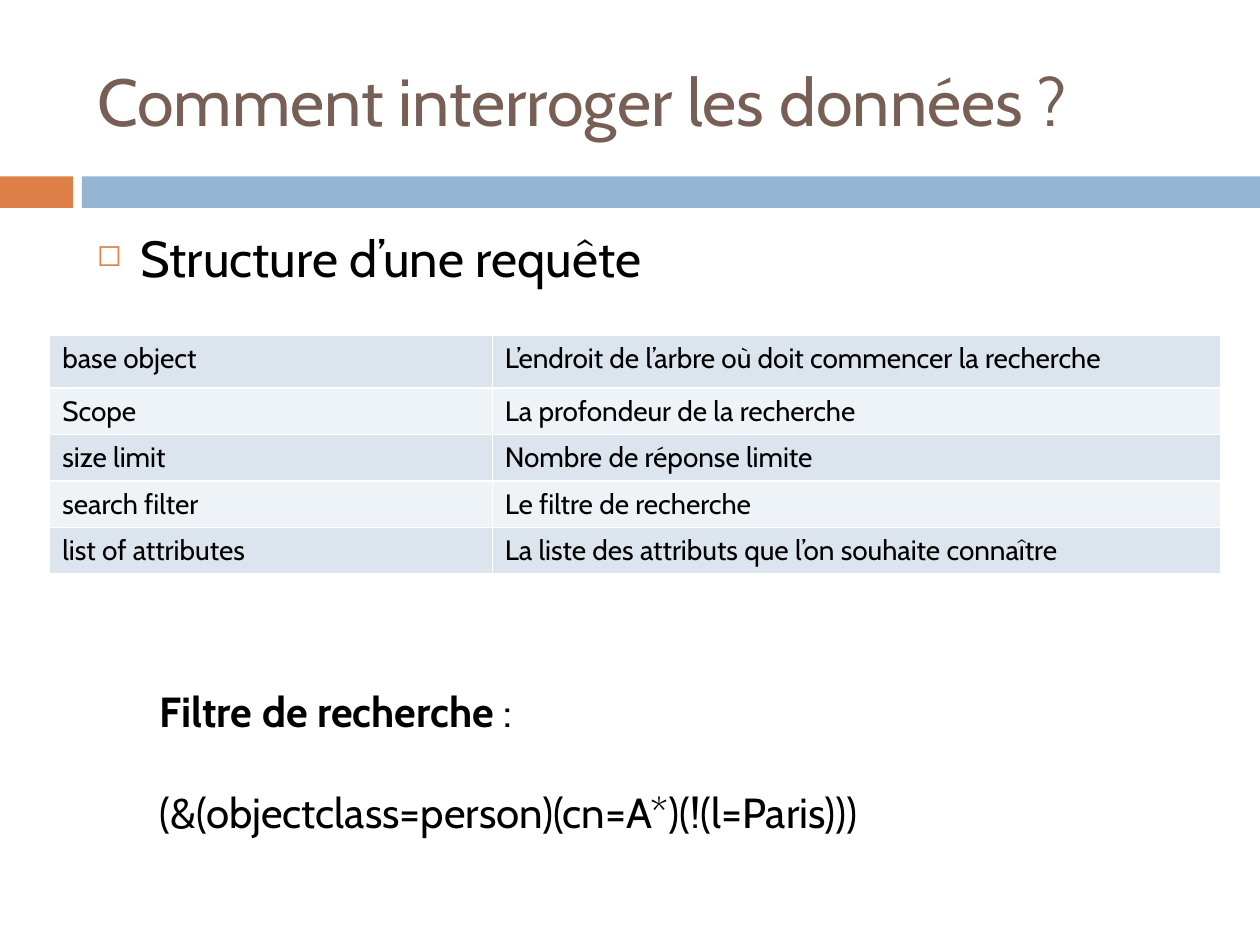
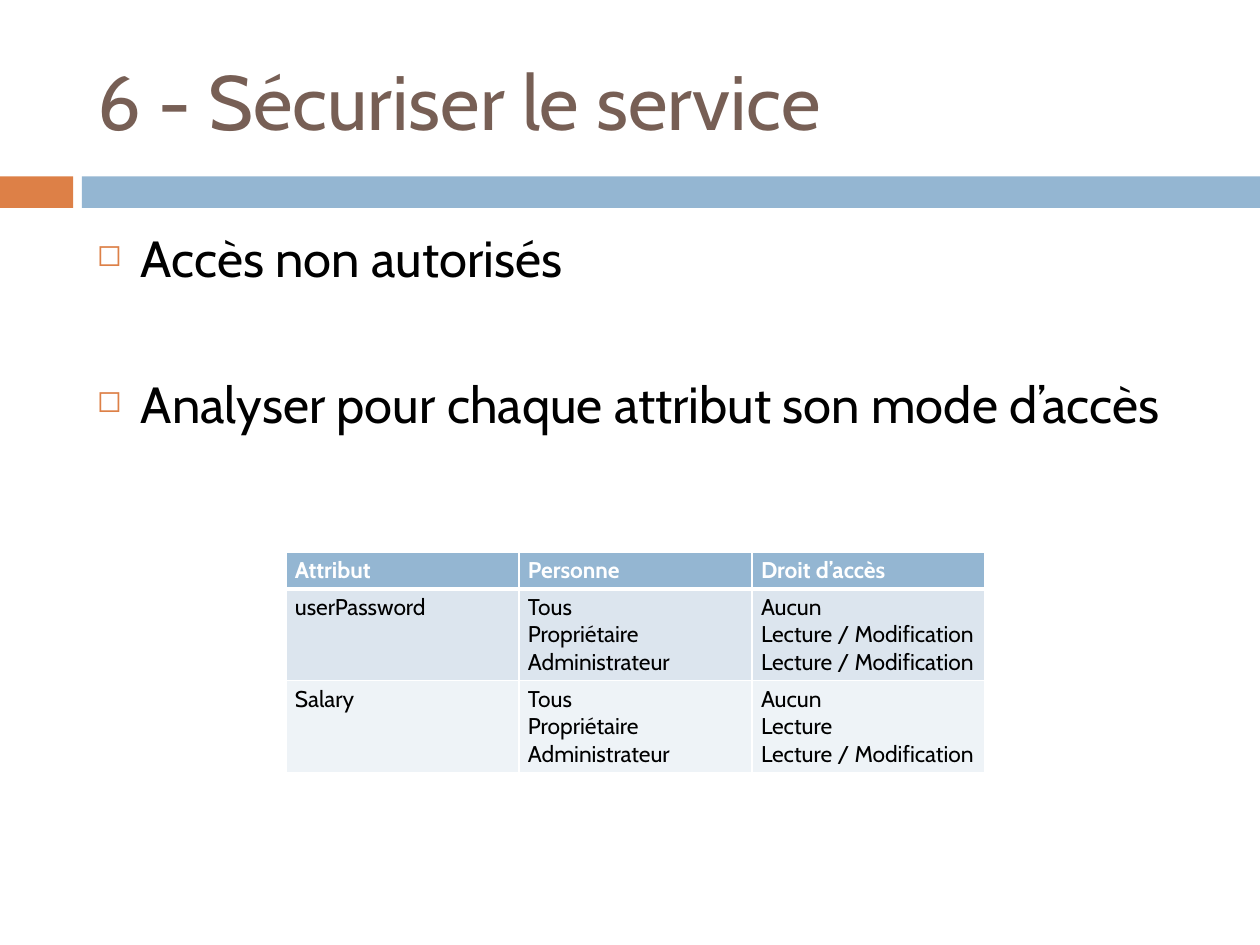
"""Build two slides on querying directory data and securing the service."""
from lxml import etree
from pptx import Presentation
from pptx.dml.color import RGBColor
from pptx.enum.shapes import MSO_SHAPE
from pptx.enum.text import MSO_ANCHOR, MSO_AUTO_SIZE, PP_ALIGN
from pptx.oxml.ns import qn
from pptx.util import Pt

FONT = "Cabin"
BLACK, WHITE, BROWN = "000000", "FFFFFF", "775F55"
ORANGE, BLUE = "DD8047", "94B6D2"
ROW_FILLS = ["DCE5EE", "EEF3F7"]
BANDS = [(0, 41.76, ORANGE), (46.8, 673.2, BLUE)]
BODY_LEFT, BODY_TOP, BODY_WIDTH = 48.24, 126, 642.24
LINE_GAP, BULLET_INDENT = 7, 25.2
FRAME_FORMAT = {"word_wrap": True, "auto_size": MSO_AUTO_SIZE.NONE}

SLIDES = [
    {
        "title": "Comment interroger les données ?",
        "title_size": 38,
        "bullets": [("Structure d’une requête", LINE_GAP)],
        "body_height": 70.56,
        "table": {
            "at": (28.44, 191.4),
            "columns": [252.9, 416.2],
            "heights": [30.4] + [26.6] * 4,
            "size": 16,
            "margins": (7.2, 3.6),
            "header": False,
            "rows": [
                ("base object", "L’endroit de l’arbre où doit commencer la recherche"),
                ("Scope", "La profondeur de la recherche"),
                ("size limit", "Nombre de réponse limite"),
                ("search filter", "Le filtre de recherche"),
                ("list of attributes", "La liste des attributs que l’on souhaite connaître"),
            ],
        },
    },
    {
        "title": "6 - Sécuriser le service",
        "title_size": 44,
        "bullets": [
            ("Accès non autorisés", LINE_GAP),
            ("Analyser pour chaque attribut son mode d’accès", 48.8),
        ],
        "body_height": 354.24,
        "table": {
            "at": (163.44, 315.4),
            "columns": [133.2] * 3,
            "heights": [21.2, 52.4, 52.4],
            "size": 13,
            "margins": (5.1, 2.6),
            "header": True,
            "rows": [
                ("Attribut", "Personne", "Droit d’accès"),
                ("userPassword", "Tous\nPropriétaire\nAdministrateur",
                 "Aucun\nLecture / Modification\nLecture / Modification"),
                ("Salary", "Tous\nPropriétaire\nAdministrateur",
                 "Aucun\nLecture\nLecture / Modification"),
            ],
        },
    },
]


def color(hex_value):
    return RGBColor.from_string(hex_value)


def write(frame, text, size, hex_value, bold=False):
    frame.text = text
    for paragraph in frame.paragraphs:
        paragraph.alignment = PP_ALIGN.LEFT
        for run in paragraph.runs:
            for name, value in {"name": FONT, "size": Pt(size), "bold": bold}.items():
                setattr(run.font, name, value)
            run.font.color.rgb = color(hex_value)


presentation = Presentation()
presentation.slide_width, presentation.slide_height = Pt(720), Pt(540)
title_only = presentation.slide_layouts[5]

for content in SLIDES:
    slide = presentation.slides.add_slide(title_only)

    for left, width, fill in BANDS:
        band = slide.shapes.add_shape(
            MSO_SHAPE.RECTANGLE, Pt(left), Pt(100.8), Pt(width), Pt(18))
        band.shadow.inherit = False
        band.fill.solid()
        band.fill.fore_color.rgb = color(fill)
        band.line.fill.background()

    title = slide.shapes.title
    title_place = {"left": BODY_LEFT, "top": 18, "width": BODY_WIDTH, "height": 77.76}
    for name, value in title_place.items():
        setattr(title, name, Pt(value))
    for name, value in {**FRAME_FORMAT, "vertical_anchor": MSO_ANCHOR.MIDDLE}.items():
        setattr(title.text_frame, name, value)
    write(title.text_frame, content["title"], content["title_size"], BROWN)

    body = slide.shapes.add_textbox(
        Pt(BODY_LEFT), Pt(BODY_TOP), Pt(BODY_WIDTH), Pt(content["body_height"]))
    for name, value in FRAME_FORMAT.items():
        setattr(body.text_frame, name, value)
    bullets = content["bullets"]
    write(body.text_frame, "\n".join(text for text, gap in bullets), 29, BLACK)
    for paragraph, (text, gap) in zip(body.text_frame.paragraphs, bullets):
        paragraph.space_before = Pt(gap)
        properties = paragraph._p.get_or_add_pPr()
        properties.set("marL", str(Pt(BULLET_INDENT)))
        properties.set("indent", str(-Pt(BULLET_INDENT)))
        bullet_color = etree.SubElement(properties, qn("a:buClr"))
        etree.SubElement(bullet_color, qn("a:srgbClr"), val=ORANGE)
        etree.SubElement(properties, qn("a:buSzPct"), val="60000")
        etree.SubElement(properties, qn("a:buChar"), char="◻")

    grid = content["table"]
    left, top = grid["at"]
    table = slide.shapes.add_table(
        len(grid["rows"]), len(grid["columns"]), Pt(left), Pt(top),
        Pt(sum(grid["columns"])), Pt(sum(grid["heights"]))).table
    table.first_row = grid["header"]
    table.horz_banding = False
    for column, width in zip(table.columns, grid["columns"]):
        column.width = Pt(width)
    side, edge = grid["margins"]
    cell_format = {"margin_left": Pt(side), "margin_right": Pt(side),
                   "margin_top": Pt(edge), "margin_bottom": Pt(edge)}
    for row_index, texts in enumerate(grid["rows"]):
        table.rows[row_index].height = Pt(grid["heights"][row_index])
        is_header = grid["header"] and row_index == 0
        fill = BLUE if is_header else ROW_FILLS[(row_index - grid["header"]) % 2]
        for column_index, text in enumerate(texts):
            cell = table.cell(row_index, column_index)
            for name, value in cell_format.items():
                setattr(cell, name, value)
            write(cell.text_frame, text, grid["size"],
                  WHITE if is_header else BLACK, is_header)
            properties = cell._tc.get_or_add_tcPr()
            for border in ("lnL", "lnR", "lnT", "lnB"):
                thick = (is_header and border == "lnB") or (
                    grid["header"] and row_index == 1 and border == "lnT")
                line = etree.SubElement(
                    properties, qn(f"a:{border}"), w=str(Pt(3 if thick else 1)))
                line_fill = etree.SubElement(line, qn("a:solidFill"))
                etree.SubElement(line_fill, qn("a:srgbClr"), val=WHITE)
            cell.fill.solid()
            cell.fill.fore_color.rgb = color(fill)

query_slide = presentation.slides[0]
filter_box = query_slide.shapes.add_textbox(Pt(84.24), Pt(388.1), Pt(545.76), Pt(94.3))
filter_frame = filter_box.text_frame
filter_frame.word_wrap = True
write(filter_frame, "Filtre de recherche \n(&(objectclass=person)(cn=A*)(!(l=Paris)))", 24, BLACK)
heading, expression = filter_frame.paragraphs
heading.runs[0].font.bold = True
colon = heading.add_run()
colon.text = ":"
for name, value in {"name": FONT, "size": Pt(24), "bold": False}.items():
    setattr(colon.font, name, value)
colon.font.color.rgb = color(BLACK)
expression.space_before = Pt(28.8)

presentation.save("out.pptx")
